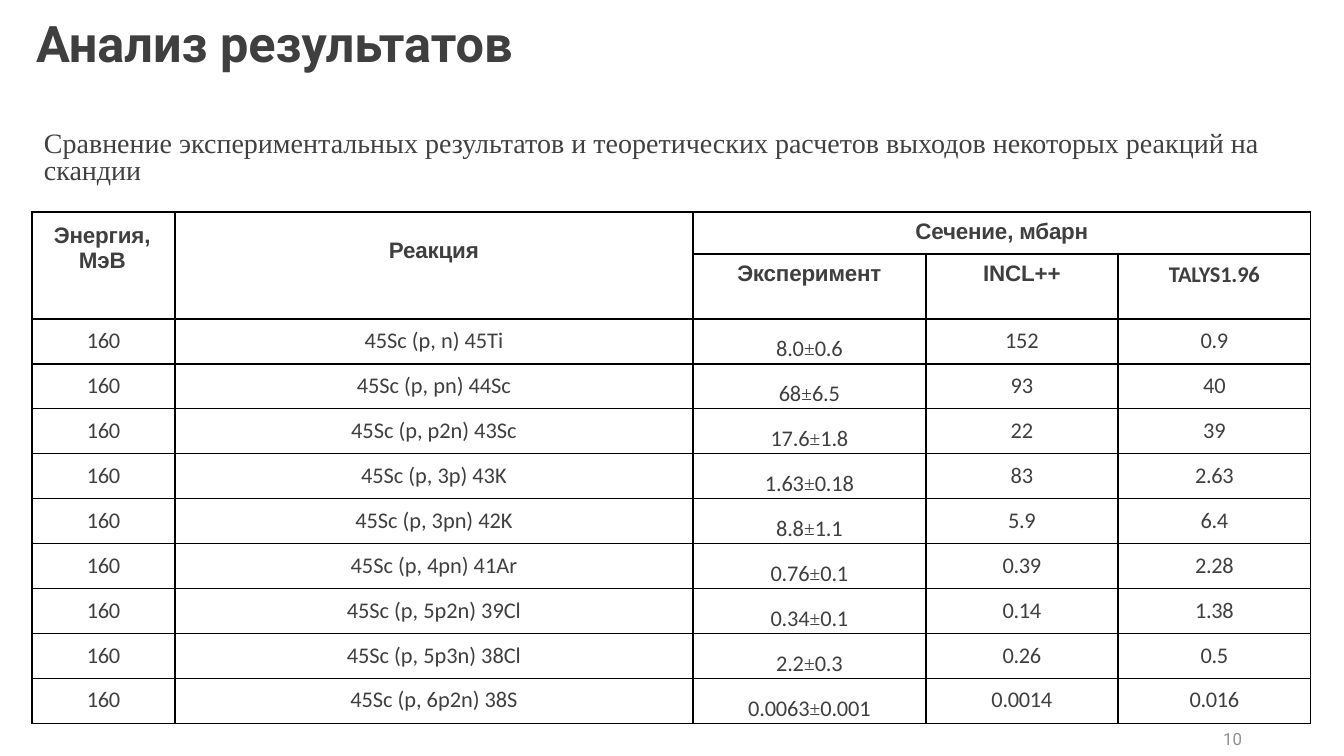
from lxml import etree
from pptx import Presentation
from pptx import util as u
from pptx.dml.color import RGBColor
from pptx.enum import text
from pptx.oxml import ns

PX = 914400 / 100.8
DARK = RGBColor(0x3F, 0x3F, 0x3F)
SUBTITLE = RGBColor(0x40, 0x40, 0x40)
GRAY = RGBColor(0x90, 0x90, 0x90)
LEFT, CENTER, RIGHT = text.PP_ALIGN.LEFT, text.PP_ALIGN.CENTER, text.PP_ALIGN.RIGHT
TOP, MIDDLE, BOTTOM = text.MSO_ANCHOR.TOP, text.MSO_ANCHOR.MIDDLE, text.MSO_ANCHOR.BOTTOM


def px(value):
    return u.Emu(round(value * PX))


def write(frame, spans, align, color, spacing=None):
    para = frame.paragraphs[0]
    para.alignment = align
    para.line_spacing = spacing
    for words, name, size, bold, extra in spans:
        span = para.add_run()
        span.text = words
        for key, value in {"name": name, "size": u.Pt(size), "bold": bold}.items():
            setattr(span.font, key, value)
        span.font.color.rgb = color
        for key, value in extra.items():
            span.font._element.set(key, value)


deck = Presentation()
deck.slide_width, deck.slide_height = px(1344), px(756)
page = deck.slides.add_slide(deck.slide_layouts[5])

title = page.shapes.title
for key, value in {"left": 26, "top": 0, "width": 1034, "height": 92}.items():
    setattr(title, key, px(value))
title.text_frame.vertical_anchor = MIDDLE
title.text_frame.auto_size = text.MSO_AUTO_SIZE.NONE
write(title.text_frame, [("Анализ результатов", "Roboto", 36, True, {})], LEFT, DARK, 0.9)

TEXTS = [
    ((950, 723, 302, 32), "10", "Roboto", 12, RIGHT, GRAY, MIDDLE, None),
    ((34, 127, 1277, 65),
     "Сравнение экспериментальных результатов и теоретических расчетов выходов некоторых реакций на скандии",
     "Times New Roman", 20, LEFT, SUBTITLE, TOP, 0.8),
]
for place, words, name, size, align, color, anchor, spacing in TEXTS:
    box = page.shapes.add_textbox(*map(px, place))
    box.text_frame.word_wrap = True
    box.text_frame.vertical_anchor = anchor
    write(box.text_frame, [(words, name, size, False, {})], align, color, spacing)

WIDTHS = [143, 518, 233, 192, 193]
HEIGHTS = [42, 65] + [45] * 9
RESULTS = [
    ("45Sc (p, n) 45Ti", "8.0±0.6", "152", "0.9"),
    ("45Sc (p, pn) 44Sc", "68±6.5", "93", "40"),
    ("45Sc (p, p2n) 43Sc", "17.6±1.8", "22", "39"),
    ("45Sc (p, 3p) 43K", "1.63±0.18", "83", "2.63"),
    ("45Sc (p, 3pn) 42K", "8.8±1.1", "5.9", "6.4"),
    ("45Sc (p, 4pn) 41Ar", "0.76±0.1", "0.39", "2.28"),
    ("45Sc (p, 5p2n) 39Cl", "0.34±0.1", "0.14", "1.38"),
    ("45Sc (p, 5p3n) 38Cl", "2.2±0.3", "0.26", "0.5"),
    ("45Sc (p, 6p2n) 38S", "0.0063±0.001", "0.0014", "0.016"),
]
HEADERS = [
    (0, 0, "Энергия, МэВ", "Arial", 11),
    (0, 1, "Реакция", "Arial", 26),
    (0, 2, "Сечение, мбарн", "Arial", 7),
    (1, 2, "Эксперимент", "Arial", 7),
    (1, 3, "INCL++", "Arial", 7),
    (1, 4, "TALYS1.96", "Calibri", 7),
]

frame = page.shapes.add_table(len(HEIGHTS), len(WIDTHS), px(32), px(212), px(sum(WIDTHS)), px(sum(HEIGHTS)))
table = frame.table
table.first_row = table.horz_banding = False
for column, width in zip(table.columns, WIDTHS):
    column.width = px(width)
for row, height in zip(table.rows, HEIGHTS):
    row.height = px(height)

for cell in table.iter_cells():
    for key, value in {"margin_left": 0, "margin_top": 8, "margin_right": 0, "margin_bottom": 0}.items():
        setattr(cell, key, px(value))
    properties = cell._tc.get_or_add_tcPr()
    for side in ("a:lnL", "a:lnR", "a:lnT", "a:lnB"):
        line = etree.SubElement(properties, ns.qn(side), w=str(u.Pt(1)))
        fill = etree.SubElement(line, ns.qn("a:solidFill"))
        etree.SubElement(fill, ns.qn("a:srgbClr"), val="000000")
    cell.fill.background()

for first, last in [((0, 0), (1, 0)), ((0, 1), (1, 1)), ((0, 2), (0, 4))]:
    table.cell(*first).merge(table.cell(*last))

for row, column, words, name, margin in HEADERS:
    cell = table.cell(row, column)
    cell.margin_top = px(margin)
    write(cell.text_frame, [(words, name, 16, True, {"spc": "-10"})], CENTER, DARK)

energy = table.cell(0, 0).text_frame.paragraphs[0]
energy.alignment = LEFT
for key, value in {"marL": 47, "indent": -25}.items():
    energy._p.get_or_add_pPr().set(key, str(px(value)))

for row, result in enumerate(RESULTS, 2):
    for column, words in enumerate(("160",) + result):
        cell = table.cell(row, column)
        value, sign, error = words.partition("±")
        spacing = {"spc": "0" if column == 1 else "-10" if sign else "-20"}
        spans = [(value, "Calibri", 16, False, spacing)]
        if sign:
            cell.margin_top = 0
            cell.vertical_anchor = BOTTOM
            spans += [
                (sign, "Times New Roman", 24, False, {"spc": "-10", "baseline": "3000"}),
                (error, "Calibri", 16, False, spacing),
            ]
        write(cell.text_frame, spans, CENTER, DARK)

deck.save("out.pptx")
